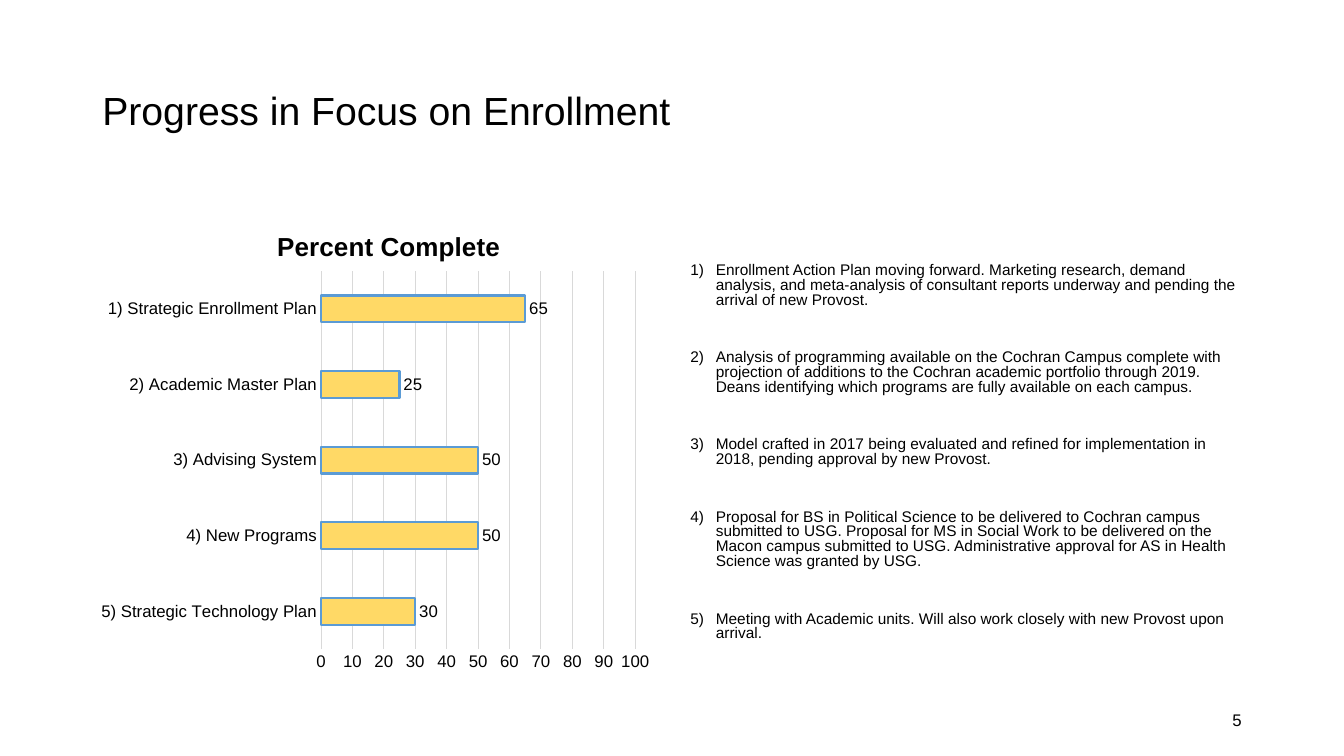
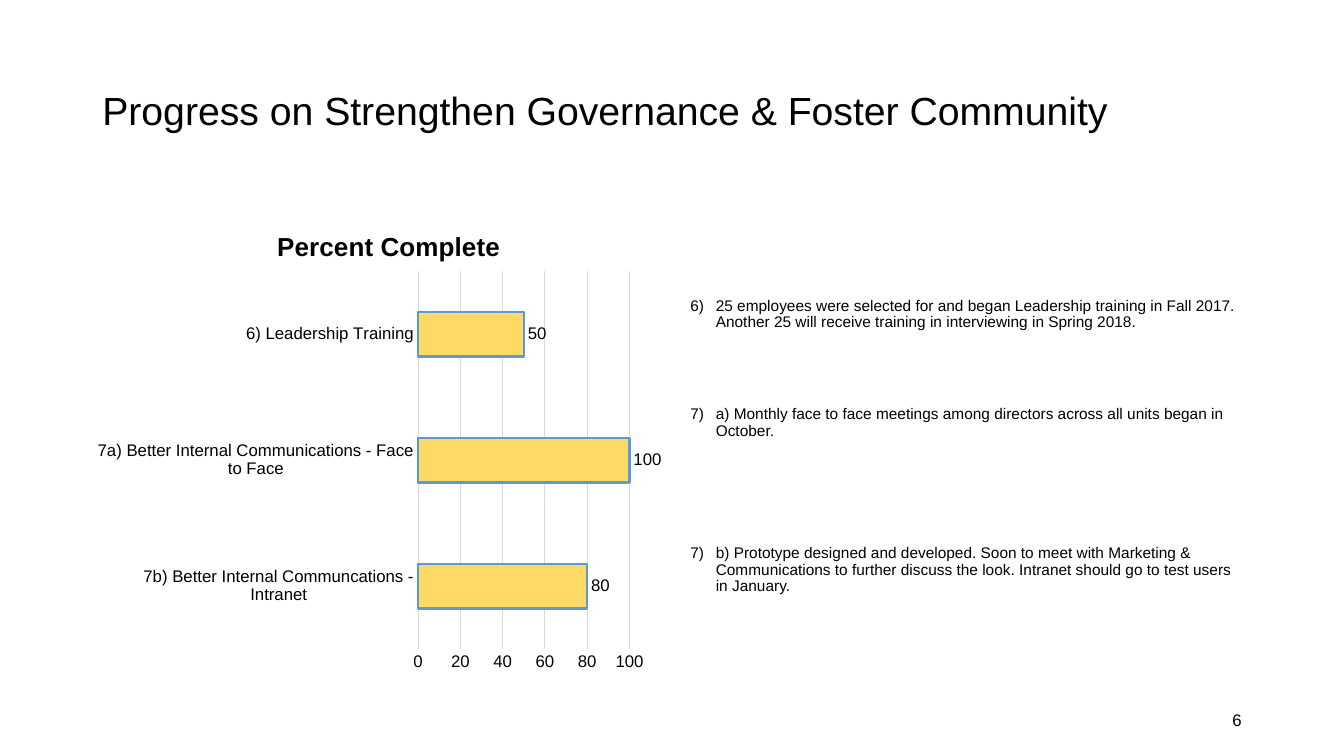
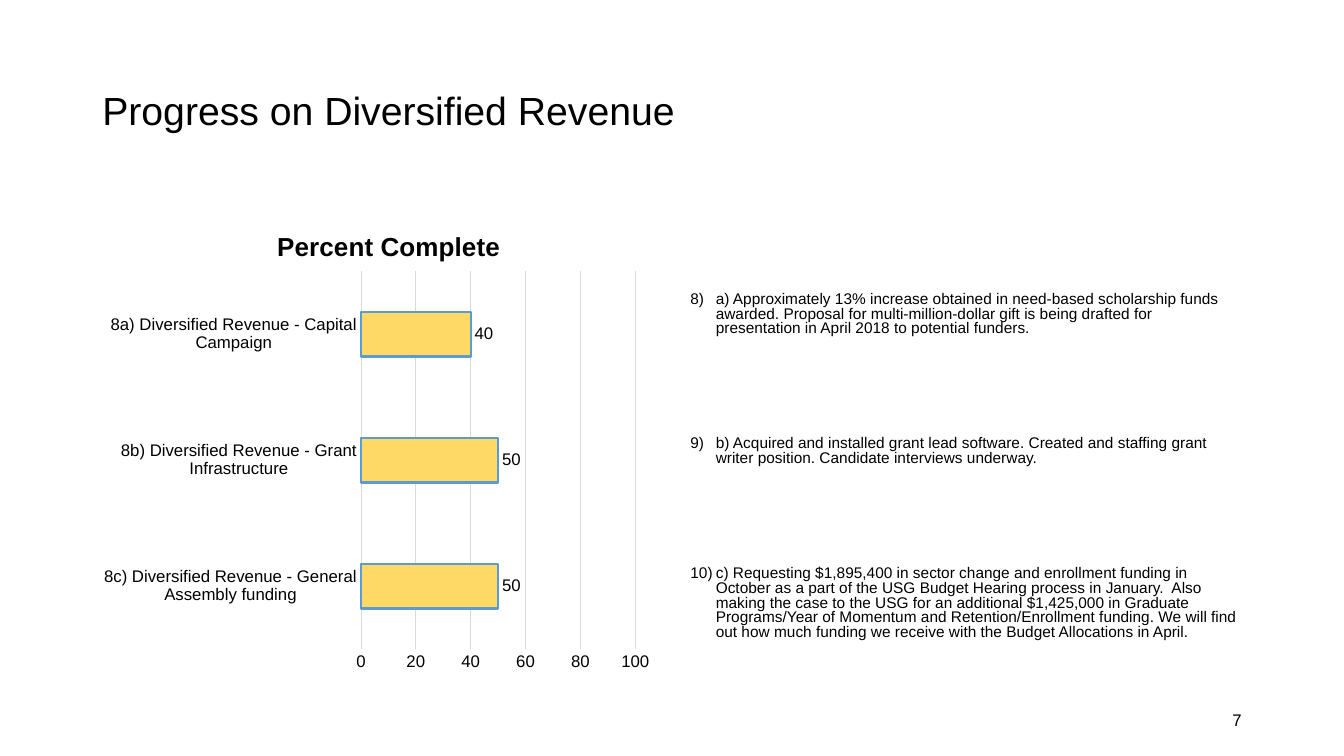
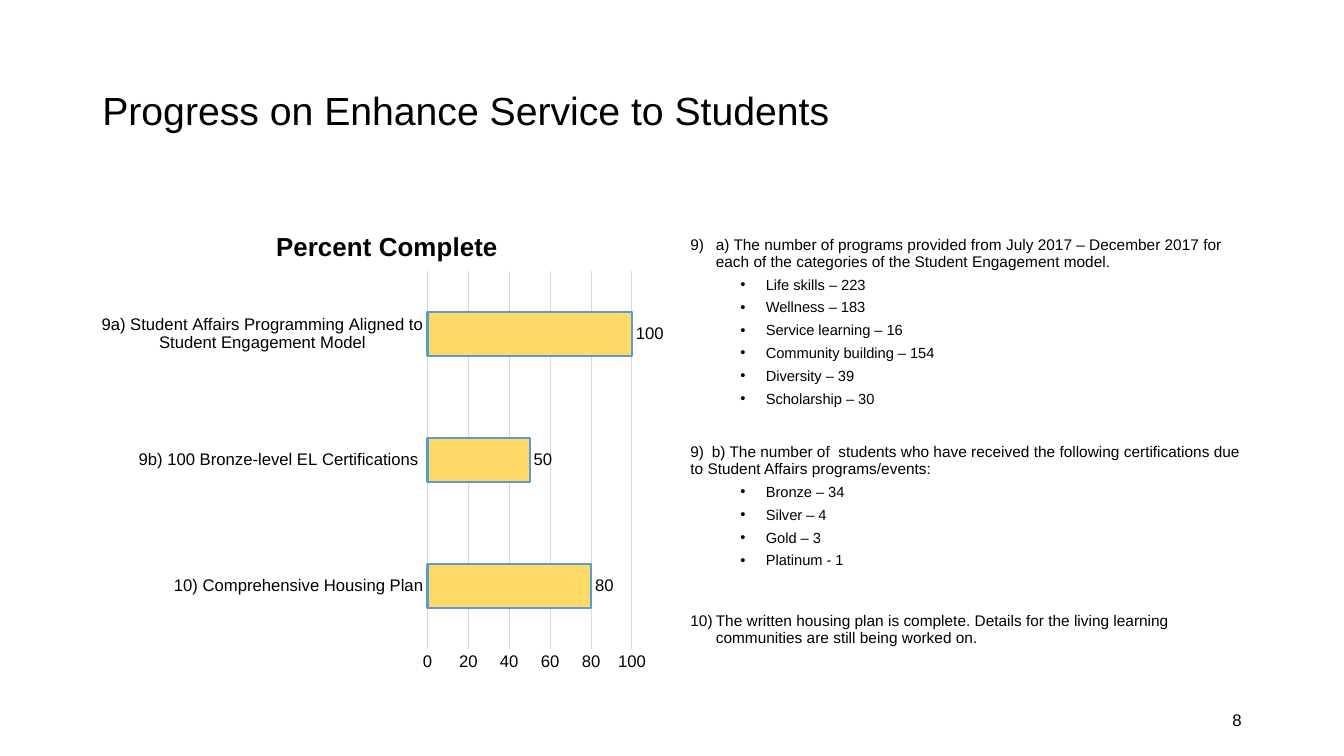
from lxml import etree
from pptx import Presentation
from pptx.chart.data import CategoryChartData as Data
from pptx.dml.color import RGBColor as Rgb
from pptx.enum.chart import XL_CHART_TYPE as Kind, XL_LABEL_POSITION as Spot
from pptx.enum.chart import XL_TICK_MARK as Tick
from pptx.enum.text import MSO_ANCHOR as Anchor, PP_ALIGN as Align
from pptx.oxml.ns import qn
from pptx.util import Cm, Pt

HUES = {"ink": "000000", "bar": "FFD966", "edge": "5B9BD5", "grid": "D9D9D9"}
FACE = "Arial"
TOP = 5.08
LEAD = 13.1


def put(item, **vals):
    for key, val in vals.items():
        setattr(item, key, val)


def place(node, slot, **vals):
    for old in node.findall(qn("c:layout")):
        node.remove(old)
    lay = etree.Element(qn("c:layout"))
    man = etree.SubElement(lay, qn("c:manualLayout"))
    for key, val in vals.items():
        etree.SubElement(man, qn("c:" + key)).set("val", str(val))
    node.insert(slot, lay)


class Deck:
    def __init__(self):
        self.file = Presentation()
        put(self.file, slide_width=Cm(33.87), slide_height=Cm(19.05))
        self.page = None

    def start(self, title, num):
        self.page = self.file.slides.add_slide(self.file.slide_layouts[6])
        self.line(title, (2.33, 1.01, 29.21, 3.68), 28, Align.LEFT)
        self.line(str(num), (23.92, 17.66, 7.62, 1.01), 12, Align.RIGHT)

    def style(self, font, size):
        put(font, name=FACE, size=Pt(size))
        font.color.rgb = Rgb.from_string(HUES["ink"])

    def stroke(self, line, hue, width):
        line.color.rgb = Rgb.from_string(HUES[hue])
        line.width = Pt(width)

    def box(self, area, anchor):
        frame = self.page.shapes.add_textbox(*map(Cm, area)).text_frame
        put(frame, word_wrap=True, vertical_anchor=anchor)
        return frame

    def words(self, para, text, size):
        run = para.add_run()
        run.text = text
        self.style(run.font, size)

    def line(self, text, area, size, align):
        para = self.box(area, Anchor.MIDDLE).paragraphs[0]
        put(para, alignment=align, line_spacing=0.9)
        self.words(para, text, size)

    def mark(self, para, sign):
        prop = para._p.get_or_add_pPr()
        if sign is None:
            etree.SubElement(prop, qn("a:buNone"))
            tabs = etree.SubElement(prop, qn("a:tabLst"))
            tab = etree.SubElement(tabs, qn("a:tab"))
            tab.set("pos", str(Cm(0.54)))
            tab.set("algn", "l")
            return
        left = 1.9 if sign == "•" else 0.64
        prop.set("marL", str(Cm(left)))
        prop.set("indent", str(Cm(-0.64)))
        etree.SubElement(prop, qn("a:buFont")).set("typeface", FACE)
        if sign == "•":
            etree.SubElement(prop, qn("a:buChar")).set("char", sign)
        else:
            auto = etree.SubElement(prop, qn("a:buAutoNum"))
            auto.set("type", "arabicParenR")
            auto.set("startAt", str(sign))

    def notes(self, rows, tight):
        step = 10 + LEAD * tight
        drop = rows[0][0] * step / 72 * 2.54
        frame = self.box((17.15, TOP + drop, 14.4, 12.09 - drop), Anchor.TOP)
        for i, (gap, sign, text) in enumerate(rows):
            para = frame.add_paragraph() if i else frame.paragraphs[0]
            self.mark(para, sign)
            dot = sign == "•"
            before = 5 if dot else 10 + gap * step
            put(para, line_spacing=tight, space_before=Pt(before if i else 0))
            self.words(para, text, 10.5 if dot else 11)

    def bars(self, pairs, left, wide, unit):
        data = Data(number_format="0")
        data.categories = [name for name, _ in reversed(pairs)]
        data.add_series("Series 1", [val for _, val in reversed(pairs)])
        area = map(Cm, (2.33, TOP, 14.4, 12.09))
        chart = self.page.shapes.add_chart(Kind.BAR_CLUSTERED, *area, data).chart
        put(chart, has_legend=False, has_title=True)
        self.style(chart.font, 10)
        head = chart.chart_title
        self.words(head.text_frame.paragraphs[0], "Percent Complete", 18.6)
        place(head._element, 1, xMode="edge", yMode="edge", x=0.315, y=0.047)
        place(chart._chartSpace.chart.plotArea, 0, layoutTarget="inner",
              xMode="edge", yMode="edge", x=left, y=0.145, w=wide, h=0.788)
        plot = chart.plots[0]
        put(plot, gap_width=182, vary_by_categories=False, has_data_labels=True)
        tags = plot.data_labels
        put(tags, show_value=True, position=Spot.OUTSIDE_END,
            number_format="0", number_format_is_linked=False)
        self.style(tags.font, 12)
        form = plot.series[0].format
        form.fill.solid()
        form.fill.fore_color.rgb = Rgb.from_string(HUES["bar"])
        self.stroke(form.line, "edge", 1.5)
        cat, val = chart.category_axis, chart.value_axis
        for axis in (cat, val):
            put(axis, major_tick_mark=Tick.NONE, minor_tick_mark=Tick.NONE)
            self.style(axis.tick_labels.font, 12)
        put(cat, has_major_gridlines=False)
        self.stroke(cat.format.line, "grid", 0.75)
        put(val, minimum_scale=0, maximum_scale=100, major_unit=unit,
            has_major_gridlines=True)
        put(val.tick_labels, number_format="0", number_format_is_linked=False)
        self.stroke(val.major_gridlines.format.line, "grid", 0.75)
        val.format.line.fill.background()


PAGES = [
    ("Progress in Focus on Enrollment", (0.4, 0.55, 10), [
        ("1) Strategic Enrollment Plan", 65),
        ("2) Academic Master Plan", 25),
        ("3) Advising System", 50),
        ("4) New Programs", 50),
        ("5) Strategic Technology Plan", 30),
    ], 0.8, [
        (2, 1, "Enrollment Action Plan moving forward. Marketing research, demand analysis, and meta-analysis of consultant reports underway and pending the arrival of new Provost."),
        (1, 1, "Analysis of programming available on the Cochran Campus complete with projection of additions to the Cochran academic portfolio through 2019. Deans identifying which programs are fully available on each campus."),
        (1, 1, "Model crafted in 2017 being evaluated and refined for implementation in 2018, pending approval by new Provost."),
        (1, 1, "Proposal for BS in Political Science to be delivered to Cochran campus submitted to USG. Proposal for MS in Social Work to be delivered on the Macon campus submitted to USG. Administrative approval for AS in Health Science was granted by USG."),
        (1, 1, "Meeting with Academic units. Will also work closely with new Provost upon arrival."),
    ]),
    ("Progress on Strengthen Governance & Foster Community", (0.57, 0.37, 20), [
        ("6) Leadership Training", 50),
        ("7a) Better Internal Communications - Face to Face", 100),
        ("7b) Better Internal Communcations - Intranet", 80),
    ], 0.9, [
        (3, 6, "25 employees were selected for and began Leadership training in Fall 2017. Another 25 will receive training in interviewing in Spring 2018."),
        (2, 6, "a) Monthly face to face meetings among directors across all units began in October."),
        (3, 7, "b) Prototype designed and developed. Soon to meet with Marketing & Communications to further discuss the look. Intranet should go to test users in January."),
    ]),
    ("Progress on Diversified Revenue", (0.47, 0.48, 20), [
        ("8a) Diversified Revenue - Capital Campaign", 40),
        ("8b) Diversified Revenue - Grant Infrastructure", 50),
        ("8c) Diversified Revenue - General Assembly funding", 50),
    ], 0.8, [
        (3, 8, "a) Approximately 13% increase obtained in need-based scholarship funds awarded. Proposal for multi-million-dollar gift is being drafted for presentation in April 2018 to potential funders."),
        (3, 8, "b) Acquired and installed grant lead software. Created and staffing grant writer position. Candidate interviews underway."),
        (3, 8, "c) Requesting $1,895,400 in sector change and enrollment funding in October as a part of the USG Budget Hearing process in January.  Also making the case to the USG for an additional $1,425,000 in Graduate Programs/Year of Momentum and Retention/Enrollment funding. We will find out how much funding we receive with the Budget Allocations in April."),
    ]),
    ("Progress on Enhance Service to Students", (0.59, 0.36, 20), [
        ("9a) Student Affairs Programming Aligned to Student Engagement Model", 100),
        ("9b) 100 Bronze-level EL Certifications ", 50),
        ("10) Comprehensive Housing Plan", 80),
    ], 0.9, [
        (1, 9, "a) The number of programs provided from July 2017 – December 2017 for each of the categories of the Student Engagement model."),
        (0, "•", "Life skills – 223"),
        (0, "•", "Wellness – 183"),
        (0, "•", "Service learning – 16"),
        (0, "•", "Community building – 154"),
        (0, "•", "Diversity – 39"),
        (0, "•", "Scholarship – 30"),
        (0.75, None, "9)\tb) The number of  students who have received the following certifications due to Student Affairs programs/events:"),
        (0, "•", "Bronze – 34"),
        (0, "•", "Silver – 4"),
        (0, "•", "Gold – 3"),
        (0, "•", "Platinum - 1"),
        (1, 10, "The written housing plan is complete. Details for the living learning communities are still being worked on."),
    ]),
]


def main():
    deck = Deck()
    for num, (title, fit, pairs, tight, rows) in enumerate(PAGES, 5):
        deck.start(title, num)
        deck.bars(pairs, *fit)
        deck.notes(rows, tight)
    deck.file.save("out.pptx")


if __name__ == "__main__":
    main()
